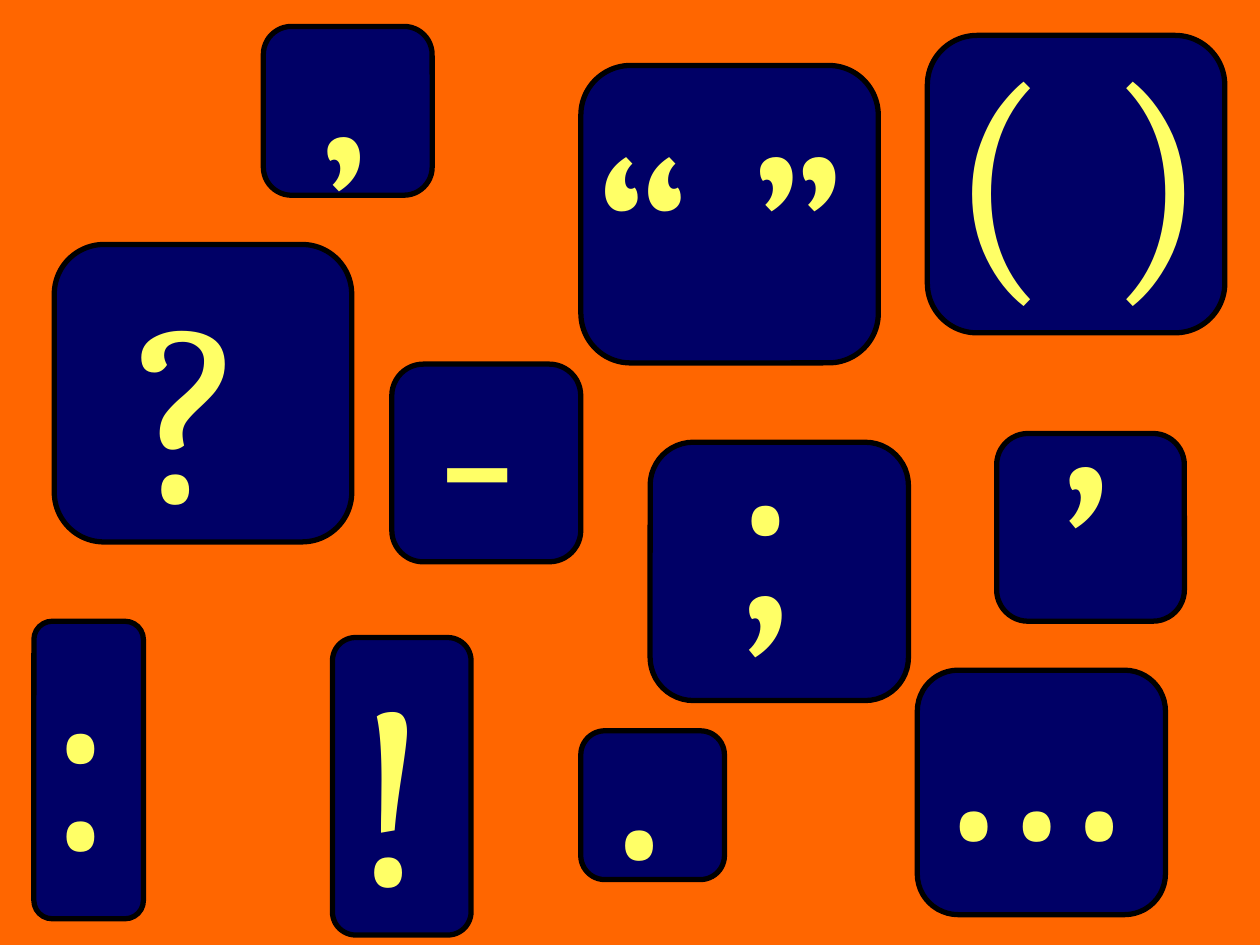
from pptx import Presentation
from pptx.dml.color import RGBColor
from pptx.enum.shapes import MSO_SHAPE
from pptx.enum.text import MSO_AUTO_SIZE
from pptx.util import Pt

ROUNDED = MSO_SHAPE.ROUNDED_RECTANGLE
GROW = MSO_AUTO_SIZE.SHAPE_TO_FIT_TEXT
COLOURS = {"background": "FF6600", "tile": "000066", "edge": "000000", "mark": "FFFF66"}
FONT = "Cambria"
MARK_SIZE = 150
MARK_WIDTH = 107.3
MARK_HEIGHT = 187.2

# mark, tile (left, top, width, height), mark offset (x, y), mark box width
TILES = [
    ("!", (190, 364.3, 79.2, 170), (5.8, -11.5), MARK_WIDTH),
    (".", (331.9, 417.6, 82.1, 85), (10.8, -79.9), MARK_WIDTH),
    ("’", (150.5, 15.1, 96.5, 96.5), (22.3, 10.8), MARK_WIDTH),
    (",", (569.5, 247.7, 107.3, 107.3), (28.8, -119.5), MARK_WIDTH),
    ("“ ”", (331.9, 37.4, 170, 170), (0, 0), 187.2),
    ("…", (524.2, 383, 141.8, 139.7), (0, -56.2), 130.3),
    ("( )", (529.9, 20.2, 170, 170), (5.8, -20.2), 184.3),
    (":", (19.4, 355, 62.6, 170), (0, -22.3), MARK_WIDTH),
    (";", (371.5, 252.7, 147.6, 147.6), (39.6, -50.4), MARK_WIDTH),
    ("-", (223.9, 208.1, 108, 113), (17.3, -51.1), MARK_WIDTH),
    ("?", (31, 139.7, 170, 170), (39.6, -5.8), MARK_WIDTH),
]


def colour(key):
    """Return the named palette colour."""
    return RGBColor.from_string(COLOURS[key])


def add_tile(slide, mark, box, offset, mark_width):
    """Group a rounded tile with its punctuation mark."""
    left, top, width, height = box
    group = slide.shapes.add_group_shape()
    tile = group.shapes.add_shape(ROUNDED, Pt(left), Pt(top), Pt(width), Pt(height))
    tile.adjustments[0] = 0.167
    tile.shadow.inherit = False
    tile.fill.solid()
    tile.fill.fore_color.rgb = colour("tile")
    tile.line.color.rgb = colour("edge")
    tile.line.width = Pt(3)

    symbol = group.shapes.add_textbox(
        Pt(left + offset[0]), Pt(top + offset[1]), Pt(mark_width), Pt(MARK_HEIGHT)
    )
    frame = symbol.text_frame
    frame.word_wrap = True
    frame.auto_size = GROW
    frame.text = mark
    font = frame.paragraphs[0].runs[0].font
    font.name = FONT
    font.size = Pt(MARK_SIZE)
    font.color.rgb = colour("mark")


def build_punctuation_slide(deck):
    """Add the slide of punctuation tiles."""
    slide = deck.slides.add_slide(deck.slide_layouts[6])
    slide.background.fill.solid()
    slide.background.fill.fore_color.rgb = colour("background")
    for mark, box, offset, mark_width in TILES:
        add_tile(slide, mark, box, offset, mark_width)


def main():
    """Build and save the deck."""
    deck = Presentation()
    deck.slide_width, deck.slide_height = Pt(720), Pt(540)
    build_punctuation_slide(deck)
    deck.save("out.pptx")


if __name__ == "__main__":
    main()
